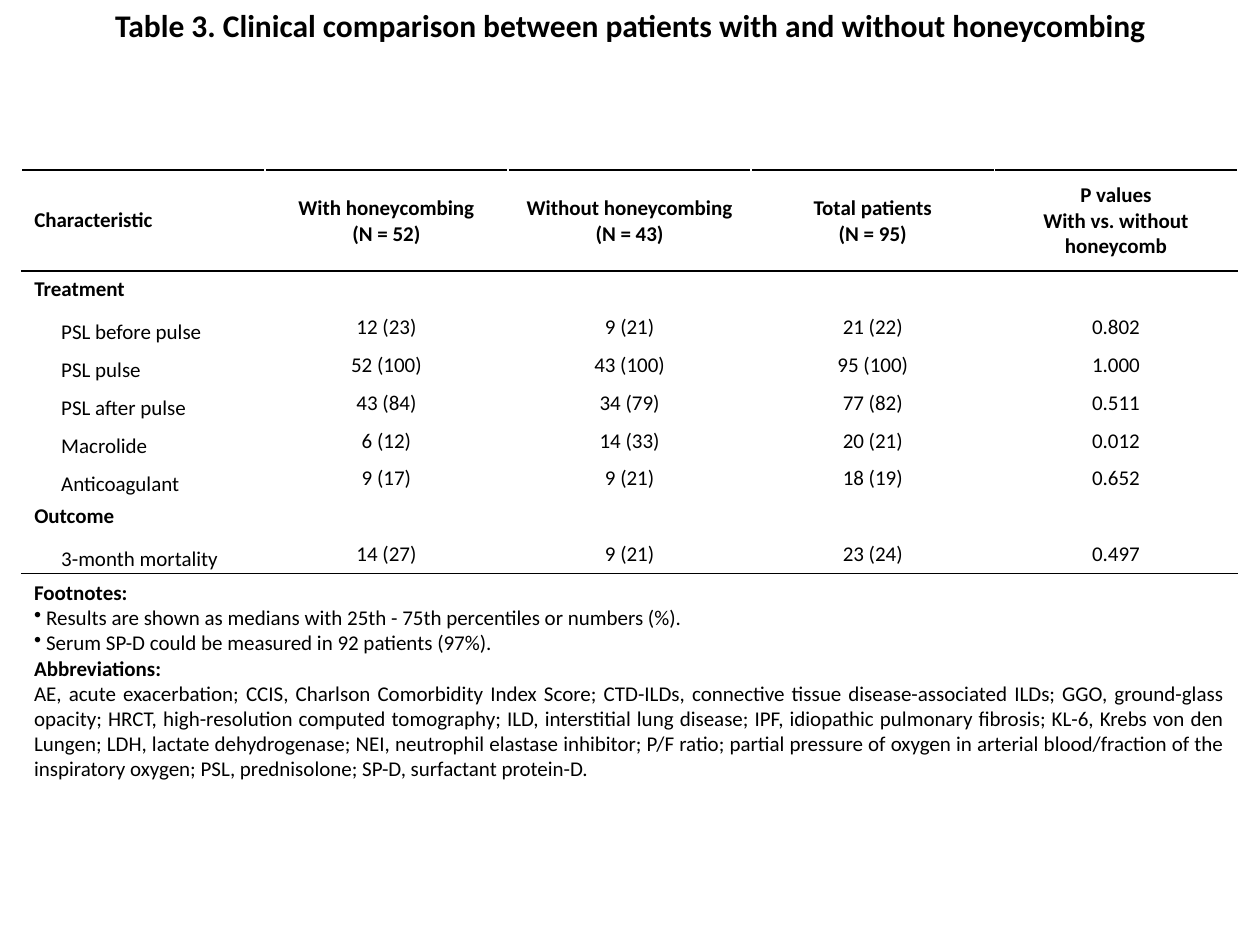
import pptx
import pptx.util
import pptx.dml.color
import pptx.enum.text
import pptx.oxml
import pptx.oxml.ns
import lxml.etree

Pt = pptx.util.Pt
ALIGN = pptx.enum.text.PP_ALIGN
COLORS = {"text": "000000", "rule": "000000"}
FONT = "Calibri"
TITLE = "Table 3. Clinical comparison between patients with and without honeycombing"
HEADER = [
    ["Characteristic"],
    ["With honeycombing", "(N = 52)"],
    ["Without honeycombing", "(N = 43)"],
    ["Total patients", "(N = 95)"],
    ["P values", "With vs. without honeycomb"],
]
BODY = [
    ("Treatment",),
    ("PSL before pulse", "12 (23)", "9 (21)", "21 (22)", "0.802"),
    ("PSL pulse", "52 (100)", "43 (100)", "95 (100)", "1.000"),
    ("PSL after pulse", "43 (84)", "34 (79)", "77 (82)", "0.511"),
    ("Macrolide", "6 (12)", "14 (33)", "20 (21)", "0.012"),
    ("Anticoagulant", "9 (17)", "9 (21)", "18 (19)", "0.652"),
    ("Outcome",),
    ("3-month mortality", "14 (27)", "9 (21)", "23 (24)", "0.497"),
]
NOTES = [
    ("heading", "Footnotes:"),
    ("bullet", "Results are shown as medians with 25th - 75th percentiles or numbers (%)."),
    ("bullet", "Serum SP-D could be measured in 92 patients (97%)."),
    ("heading", "Abbreviations:"),
    ("text", "AE, acute exacerbation; CCIS, Charlson Comorbidity Index Score; "
             "CTD-ILDs, connective tissue disease-associated ILDs; GGO, ground-glass opacity; "
             "HRCT, high-resolution computed tomography; ILD, interstitial lung disease; "
             "IPF, idiopathic pulmonary fibrosis; KL-6, Krebs von den Lungen; "
             "LDH, lactate dehydrogenase; NEI, neutrophil elastase inhibitor; "
             "P/F ratio; partial pressure of oxygen in arterial blood/fraction of the "
             "inspiratory oxygen; PSL, prednisolone; SP-D, surfactant protein-D."),
]
LEFT, WIDTH = 12.4, 694.8
TABLE_TOP, HEADER_HEIGHT, ROW_HEIGHT = 97.2, 57.6, 21.6
TABLE_HEIGHT = HEADER_HEIGHT + ROW_HEIGHT * len(BODY)
BULLET_INDENT = 6.9


def style(paragraph, size=12, bold=False, align=ALIGN.LEFT):
    paragraph.alignment = align
    font = paragraph.font
    font.name, font.size, font.bold = FONT, Pt(size), bold
    font.color.rgb = pptx.dml.color.RGBColor.from_string(COLORS["text"])


def add_bullet(paragraph):
    properties = paragraph._p.get_or_add_pPr()
    properties.set("marL", str(Pt(BULLET_INDENT)))
    properties.set("indent", str(-Pt(BULLET_INDENT)))
    bullet = lxml.etree.SubElement(properties, pptx.oxml.ns.qn("a:buChar"))
    bullet.set("char", "•")


def add_rule(cell, edge):
    cell._tc.get_or_add_tcPr().append(pptx.oxml.parse_xml(
        f'<a:{edge} {pptx.oxml.ns.nsdecls("a")} w="{Pt(1)}"><a:solidFill>'
        f'<a:srgbClr val="{COLORS["rule"]}"/></a:solidFill></a:{edge}>'))


def fill_cell(cell, lines, margins, edges, bold, align):
    cell.margin_left, cell.margin_top, cell.margin_right, cell.margin_bottom = map(Pt, margins)
    cell.vertical_anchor = pptx.enum.text.MSO_ANCHOR.MIDDLE
    for edge in edges:
        add_rule(cell, edge)
    cell.fill.background()
    cell.text_frame.text = "\n".join(lines)
    for paragraph in cell.text_frame.paragraphs:
        style(paragraph, bold=bold, align=align)


def add_text_box(slide, left, top, width, height, wrap):
    shape = slide.shapes.add_textbox(Pt(left), Pt(top), Pt(width), Pt(height))
    shape.text_frame.word_wrap = wrap
    return shape.text_frame


def add_comparison_table(slide):
    table = slide.shapes.add_table(len(BODY) + 1, len(HEADER), Pt(LEFT), Pt(TABLE_TOP),
                                   Pt(WIDTH), Pt(TABLE_HEIGHT)).table
    table.first_row = table.horz_banding = False
    for column in table.columns:
        column.width = Pt(WIDTH / len(HEADER))
    for index, row in enumerate(table.rows):
        row.height = Pt(ROW_HEIGHT if index else HEADER_HEIGHT)

    for column, lines in enumerate(HEADER):
        margins = (4.3, 0.7, 4.3, 0) if column else (7.2, 3.6, 7.2, 3.6)
        fill_cell(table.cell(0, column), lines, margins, ["lnT", "lnB"], True,
                  ALIGN.CENTER if column else ALIGN.LEFT)

    for index, values in enumerate(BODY, 1):
        section = len(values) == 1
        edges = {1: ["lnT"], len(BODY): ["lnB"]}.get(index, [])
        for column in range(len(HEADER)):
            text = values[column] if column < len(values) else ""
            label = column == 0
            margins = (22.6, 5.8, 0, 0) if label and not section else (7.2, 0, 7.2, 0)
            fill_cell(table.cell(index, column), [text], margins, edges, section,
                      ALIGN.LEFT if label else ALIGN.CENTER)


def main():
    presentation = pptx.Presentation()
    presentation.slide_width, presentation.slide_height = Pt(720), Pt(540)
    slide = presentation.slides.add_slide(presentation.slide_layouts[6])

    notes = add_text_box(slide, LEFT, TABLE_TOP + TABLE_HEIGHT, WIDTH, 123.8, True)
    notes.text = "\n".join(text for kind, text in NOTES)
    for paragraph, (kind, text) in zip(notes.paragraphs, NOTES):
        if kind == "bullet":
            add_bullet(paragraph)
        style(paragraph, bold=kind == "heading", align=ALIGN.JUSTIFY)

    title = add_text_box(slide, 49, 0, 622.8, 28.8, False)
    title.text = TITLE
    style(title.paragraphs[0], size=18, bold=True, align=ALIGN.CENTER)

    add_comparison_table(slide)
    presentation.save("out.pptx")


if __name__ == "__main__":
    main()
